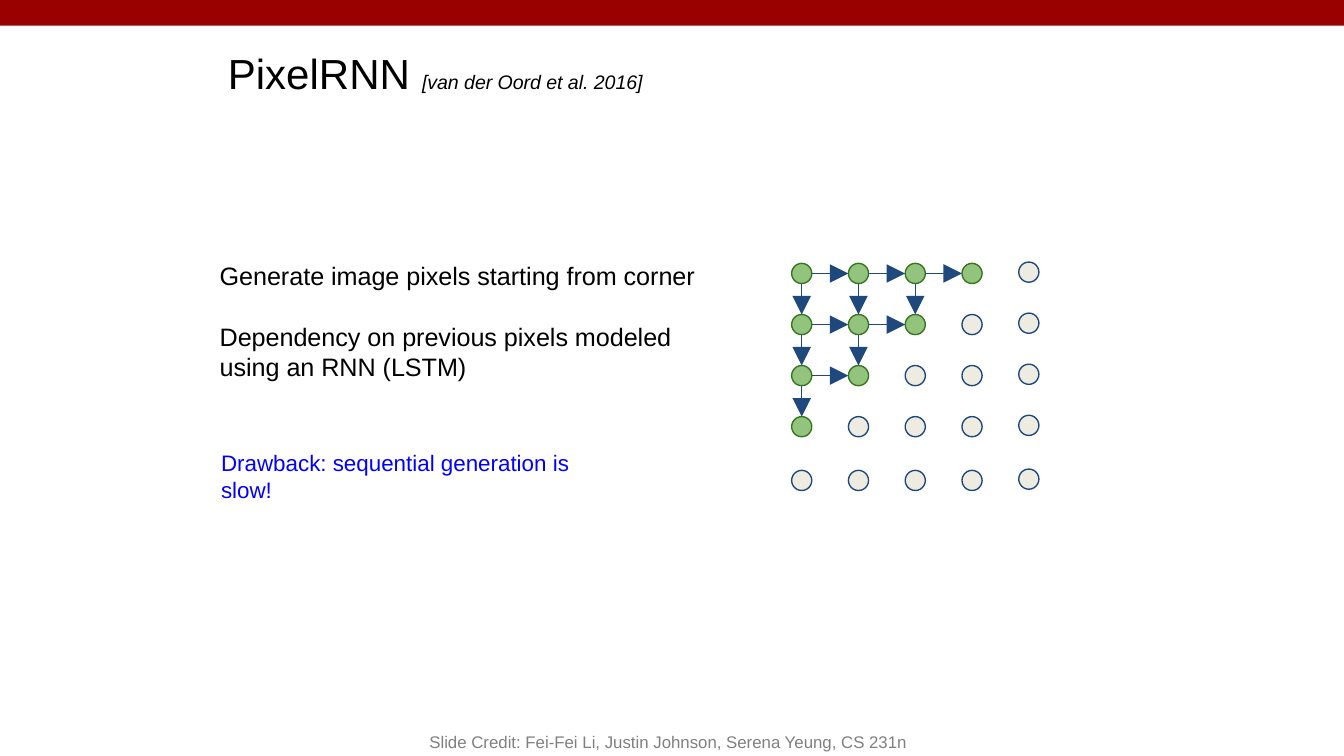
import pptx
import pptx.util
import pptx.dml.color
import pptx.enum.shapes
import pptx.enum.text
import pptx.oxml
import pptx.oxml.ns
from lxml import etree

Inches = pptx.util.Inches
Pt = pptx.util.Pt
RGBColor = pptx.dml.color.RGBColor
Shape = pptx.enum.shapes.MSO_SHAPE
Anchor = pptx.enum.text.MSO_ANCHOR
Align = pptx.enum.text.PP_ALIGN
qn = pptx.oxml.ns.qn

RED = RGBColor(0x99, 0x00, 0x00)
BLACK = RGBColor(0x00, 0x00, 0x00)
BLUE = RGBColor(0x00, 0x00, 0xFF)
GRAY = RGBColor(0x80, 0x80, 0x80)
GREEN = RGBColor(0x93, 0xC4, 0x7D)
FOREST = RGBColor(0x38, 0x76, 0x1D)
CREAM = RGBColor(0xEE, 0xEC, 0xE1)
NAVY = RGBColor(0x1F, 0x49, 0x7D)

# Widescreen slide, 16 to 9
deck = pptx.Presentation()
deck.slide_width = Inches(10)
deck.slide_height = Inches(10 * 9 / 16)
slide = deck.slides.add_slide(deck.slide_layouts[5])
shapes = slide.shapes


def write(box, paras, at, color=BLACK, align=Align.LEFT, anchor=Anchor.TOP,
          pad=5.4, gap=0):
    """Fill a box with paragraphs, each a list of (text, size, italic) runs."""
    box.left, box.top, box.width, box.height = [Inches(n) for n in at]
    frame = box.text_frame
    frame.word_wrap = True
    frame.auto_size = pptx.enum.text.MSO_AUTO_SIZE.NONE
    frame.vertical_anchor = anchor
    frame.margin_left = frame.margin_right = Pt(5.4)
    frame.margin_top = frame.margin_bottom = Pt(pad)
    for i, runs in enumerate(paras):
        para = frame.add_paragraph() if i else frame.paragraphs[0]
        para.alignment = align
        para.space_before = Pt(gap if i else 0)
        for text, size, italic in runs:
            run = para.add_run()
            run.text = text
            run.font.name = "Arial"
            run.font.size = Pt(size)
            run.font.italic = italic
            run.font.color.rgb = color


def arrow(x1, y1, x2, y2):
    """Draw a navy line with a large head at its end."""
    line = shapes.add_connector(pptx.enum.shapes.MSO_CONNECTOR.STRAIGHT,
                                Inches(x1), Inches(y1), Inches(x2), Inches(y2))
    line.line.color.rgb = NAVY
    line.line.width = Pt(0.75)
    etree.SubElement(line._element.spPr.find(qn("a:ln")), qn("a:tailEnd"),
                     type="triangle", w="lg", len="lg")
    etree.SubElement(line._element.spPr, qn("a:effectLst"))


# Top band
band = shapes.add_shape(Shape.RECTANGLE, 0, 0, Inches(10), Inches(0.19))
band.shadow.inherit = False
band.fill.solid()
band.fill.fore_color.rgb = RED
band.line.fill.background()

# Pixel grid: green pixels are already generated
DOT = 0.15
DONE = 3
cols = [5.89 + 1.69 * c / 4 for c in range(5)]
rows = [1.96, 2.34, 2.72, 3.1, 3.5]
for c, x in enumerate(cols):
    for r, y in enumerate(rows):
        rise = 0.01 if c == 4 else 0
        dot = shapes.add_shape(Shape.OVAL, Inches(x), Inches(y - rise),
                               Inches(DOT), Inches(DOT))
        done = r + c <= DONE
        dot.shadow.inherit = False
        dot.fill.solid()
        dot.fill.fore_color.rgb = GREEN if done else CREAM
        dot.line.color.rgb = FOREST if done else NAVY
        dot.line.width = Pt(0.75)

# Arrows from each pixel to the next one right and below
for c in range(DONE):
    for r in range(DONE - c):
        x, y = cols[c], rows[r]
        arrow(x + DOT, y + DOT / 2, cols[c + 1], y + DOT / 2)
        arrow(x + DOT / 2, y + DOT, x + DOT / 2, rows[r + 1])

# Main points
write(shapes.add_textbox(0, 0, 0, 0),
      [[("Generate image pixels starting from corner", 13.5, False)],
       [("Dependency on previous pixels modeled using an RNN (LSTM)",
         13.5, False)]],
      (1.56, 1.86, 3.76, 1.09), gap=16.5)

# Drawback
write(shapes.add_textbox(0, 0, 0, 0),
      [[("Drawback: sequential generation is slow!", 12, False)]],
      (1.57, 3.27, 3.17, 0.33), color=BLUE)

# Title
write(shapes.title, [[("PixelRNN ", 22.5, False),
                      ("[van der Oord et al. 2016]", 10.5, True)]],
      (1.62, 0.19, 6.75, 0.7), anchor=Anchor.MIDDLE)

# Credit line
write(shapes.add_textbox(0, 0, 0, 0),
      [[("Slide Credit: Fei-Fei Li, Justin Johnson, Serena Yeung, CS 231n",
         9, False)]],
      (2.75, 5.25, 4.44, 0.38), color=GRAY, align=Align.CENTER,
      anchor=Anchor.BOTTOM, pad=2.7)

deck.save("out.pptx")
